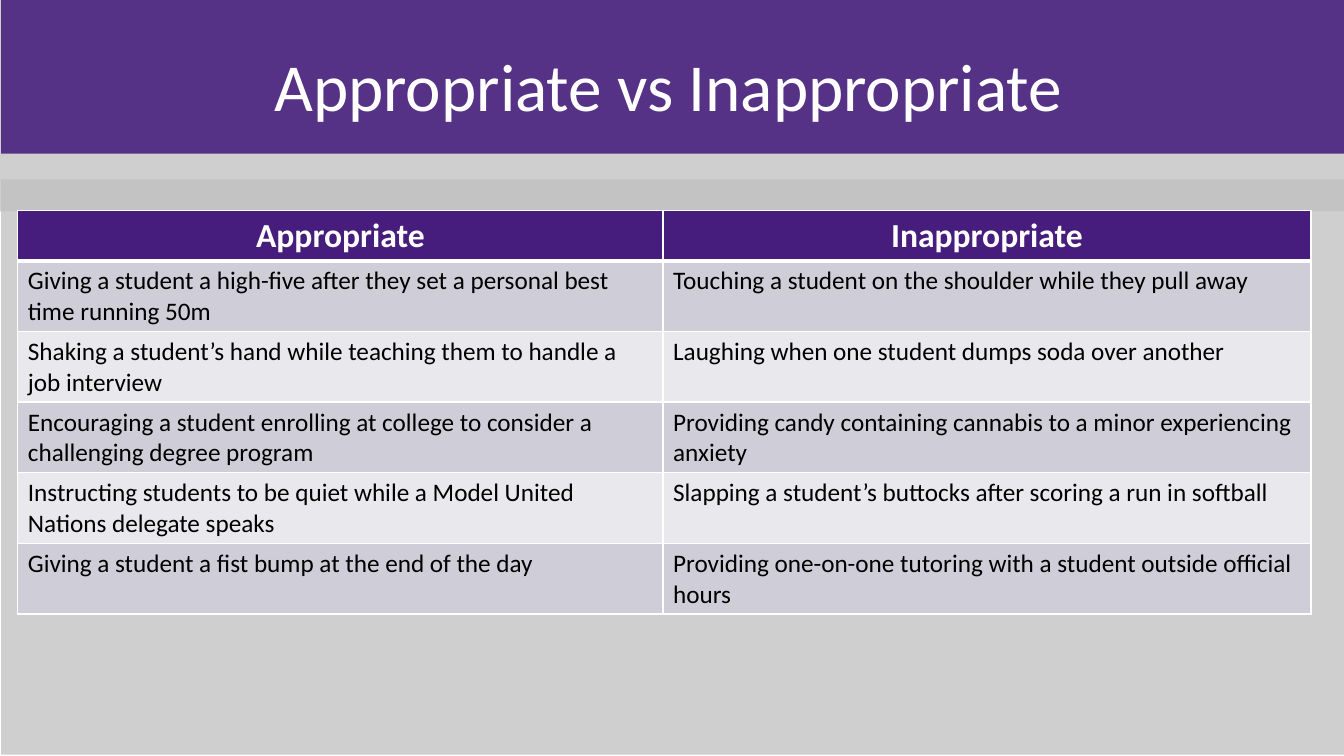
from lxml.etree import SubElement
from pptx import Presentation
from pptx.dml.color import RGBColor
from pptx.enum.shapes import MSO_SHAPE
from pptx.enum.text import MSO_AUTO_SIZE, PP_ALIGN
from pptx.oxml import parse_xml
from pptx.oxml.ns import nsdecls, qn
from pptx.util import Cm, Pt

COLORS = {
    "purple": "461D7C",
    "grey": "BFBFBF",
    "white": "FFFFFF",
    "black": "000000",
    "dark": "CFCDD7",
    "light": "E9E8EC",
}
TITLE = {"size": Pt(48), "name": "Calibri"}
HEAD = {"size": Pt(24), "name": "Calibri", "bold": True}
BODY = {"size": Pt(18), "name": "Calibri", "bold": False}


def paint(fill, color):
    fill.solid()
    fill.fore_color.rgb = RGBColor.from_string(COLORS[color])


def write(frame, text, style, color, align):
    para = frame.paragraphs[0]
    para.alignment = align
    run = para.add_run()
    run.text = text
    for key, value in style.items():
        setattr(run.font, key, value)
    run.font.color.rgb = RGBColor.from_string(COLORS[color])


deck = Presentation()
deck.slide_width, deck.slide_height = Cm(33.87), Cm(19.05)
slide = deck.slides.add_slide(deck.slide_layouts[6])

# Translucent bands: left, top, width, height, colour, opacity in percent
bands = [
    (0.03, 4.52, 33.87, 14.5, "grey", 75),
    (0, 0, 33.88, 5.33, "grey", 75),
    (0.03, -0.05, 33.9, 3.92, "purple", 88),
]
for *place, color, solid in bands:
    band = slide.shapes.add_shape(MSO_SHAPE.RECTANGLE, *map(Cm, place))
    band.shadow.inherit = False
    band.line.fill.background()
    paint(band.fill, color)
    tint = band.fill._xPr.find(".//" + qn("a:srgbClr"))
    SubElement(tint, qn("a:alpha"), val=str(solid * 1000))

title = slide.shapes.add_textbox(Cm(4), Cm(1), Cm(25.7), Cm(2.31)).text_frame
title.word_wrap = True
title.auto_size = MSO_AUTO_SIZE.SHAPE_TO_FIT_TEXT
write(title, "Appropriate vs Inappropriate", TITLE, "white", PP_ALIGN.CENTER)

rows = [
    ("Appropriate", "Inappropriate"),
    ("Giving a student a high-five after they set a personal best time running 50m",
     "Touching a student on the shoulder while they pull away"),
    ("Shaking a student’s hand while teaching them to handle a job interview",
     "Laughing when one student dumps soda over another"),
    ("Encouraging a student enrolling at college to consider a challenging degree program",
     "Providing candy containing cannabis to a minor experiencing anxiety"),
    ("Instructing students to be quiet while a Model United Nations delegate speaks",
     "Slapping a student’s buttocks after scoring a run in softball"),
    ("Giving a student a fist bump at the end of the day",
     "Providing one-on-one tutoring with a student outside official hours"),
]
grid = slide.shapes.add_table(
    len(rows), 2, Cm(0.45), Cm(5.3), Cm(32.59), Cm(10.17)).table
for col, width in zip(grid.columns, (16.26, 16.33)):
    col.width = Cm(width)

for r, texts in enumerate(rows):
    grid.rows[r].height = Cm(1.78 if r else 1.27)
    # The rule between the head and the first body row is thicker
    edges = {"L": 1, "R": 1, "T": 3 if r == 1 else 1, "B": 1 if r else 3}
    for c, text in enumerate(texts):
        cell = grid.cell(r, c)
        props = cell._tc.get_or_add_tcPr()
        for side, width in edges.items():
            props.append(parse_xml(
                f'<a:ln{side} {nsdecls("a")} w="{Pt(width)}"><a:solidFill>'
                f'<a:srgbClr val="{COLORS["white"]}"/></a:solidFill></a:ln{side}>'))
        if r == 0:
            paint(cell.fill, "purple")
            write(cell.text_frame, text, HEAD, "white", PP_ALIGN.CENTER)
        else:
            paint(cell.fill, "dark" if r % 2 else "light")
            write(cell.text_frame, text, BODY, "black", PP_ALIGN.LEFT)

deck.save("out.pptx")
